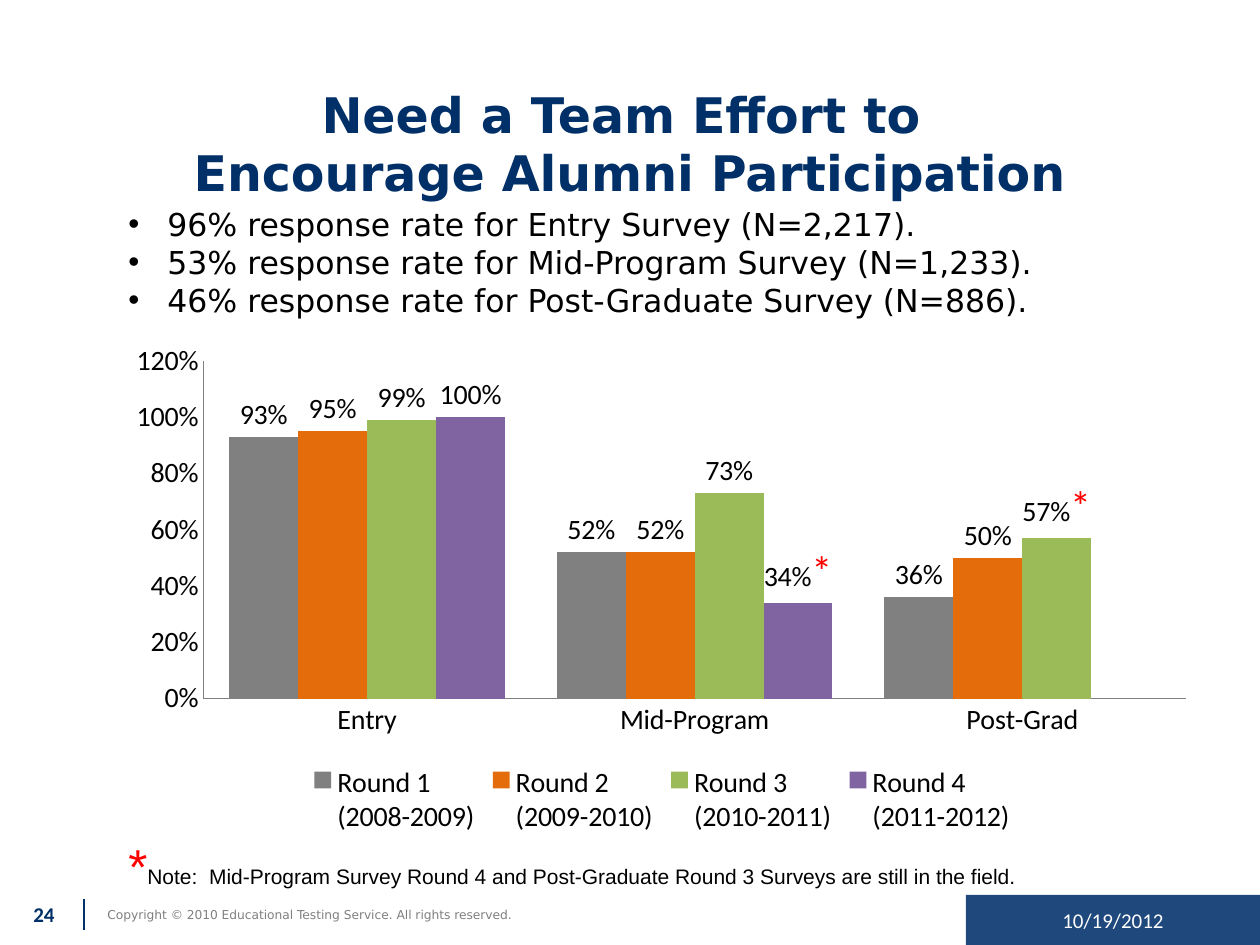
from lxml.etree import SubElement
from pptx import Presentation
from pptx.chart.data import CategoryChartData
from pptx.dml.color import RGBColor
from pptx.enum.chart import XL_CHART_TYPE, XL_LABEL_POSITION, XL_LEGEND_POSITION, XL_TICK_MARK
from pptx.enum.shapes import MSO_CONNECTOR, MSO_SHAPE
from pptx.enum.text import MSO_ANCHOR, PP_ALIGN
from pptx.oxml import parse_xml
from pptx.oxml.ns import nsdecls, qn
from pptx.util import Pt

PX = 914400 / 126
NAVY = RGBColor(0x00, 0x30, 0x67)
BLUE = RGBColor(0x1F, 0x49, 0x7D)
GRAY = RGBColor(0x80, 0x80, 0x80)
ORANGE = RGBColor(0xE4, 0x6C, 0x0A)
GREEN = RGBColor(0x9B, 0xBB, 0x59)
PURPLE = RGBColor(0x80, 0x64, 0xA2)
RED = RGBColor(0xFF, 0x00, 0x00)
BLACK = RGBColor(0x00, 0x00, 0x00)
WHITE = RGBColor(0xFF, 0xFF, 0xFF)


def px(*lengths):
    return [round(length * PX) for length in lengths]


def add_run(para, text, size, font, color, bold=False):
    span = para.add_run()
    span.text = text
    span.font.size = Pt(size)
    span.font.name = font
    span.font.color.rgb = color
    span.font.bold = bold


deck = Presentation()
deck.slide_width, deck.slide_height = px(1260, 945)
page = deck.slides.add_slide(deck.slide_layouts[5])

title = page.shapes.title
title.left, title.top, title.width, title.height = px(52, 63, 1155, 160)
title.text_frame.vertical_anchor = MSO_ANCHOR.MIDDLE
para = title.text_frame.paragraphs[0]
para.alignment = PP_ALIGN.CENTER
add_run(para, "Need a Team Effort to ", 28, "DejaVu Sans", NAVY, True)
para.add_line_break()
add_run(para, "Encourage Alumni Participation", 28, "DejaVu Sans", NAVY, True)

rates = page.shapes.add_textbox(*px(116, 199, 1050, 127))
rates.text_frame.word_wrap = True
for index, text in enumerate([
    "96% response rate for Entry Survey (N=2,217).",
    "53% response rate for Mid-Program Survey (N=1,233).",
    "46% response rate for Post-Graduate Survey (N=886).",
]):
    para = rates.text_frame.paragraphs[0] if index == 0 else rates.text_frame.add_paragraph()
    properties = para._p.get_or_add_pPr()
    indent = px(39)[0]
    properties.set("marL", str(indent))
    properties.set("indent", str(-indent))
    SubElement(properties, qn("a:buFont")).set("typeface", "Arial")
    SubElement(properties, qn("a:buChar")).set("char", "•")
    add_run(para, text, 18, "DejaVu Sans", BLACK)

data = CategoryChartData(number_format="0%")
data.categories = ["Entry", "Mid-Program", "Post-Grad"]
rounds = [
    ("Round 1 \n(2008-2009)", (0.93, 0.52, 0.36), GRAY),
    ("Round 2 \n(2009-2010)", (0.95, 0.52, 0.5), ORANGE),
    ("Round 3 \n(2010-2011)", (0.99, 0.73, 0.57), GREEN),
    ("Round 4 \n(2011-2012)", (1, 0.34, None), PURPLE),
]
for name, values, color in rounds:
    data.add_series(name, values)
chart = page.shapes.add_chart(XL_CHART_TYPE.COLUMN_CLUSTERED, *px(116, 336, 1092, 504), data).chart
chart.has_title = False
chart.font.name = "Calibri"
chart.font.size = Pt(16)
chart.font.color.rgb = BLACK
chart.has_legend = True
chart.legend.position = XL_LEGEND_POSITION.BOTTOM
chart.legend.include_in_layout = False

for axis in (chart.category_axis, chart.value_axis):
    axis.major_tick_mark = XL_TICK_MARK.NONE
    axis.minor_tick_mark = XL_TICK_MARK.NONE
    axis.has_major_gridlines = False
    axis.format.line.color.rgb = GRAY
chart.value_axis.minimum_scale = 0
chart.value_axis.maximum_scale = 1.2
chart.value_axis.major_unit = 0.2
chart.value_axis.tick_labels.number_format = "0%"
chart.value_axis.tick_labels.number_format_is_linked = False

plot = chart.plots[0]
plot.gap_width = 75
plot.overlap = 0
plot.vary_by_categories = False
for series, (name, values, color) in zip(plot.series, rounds):
    series.format.fill.solid()
    series.format.fill.fore_color.rgb = color
    labels = series.data_labels
    labels.show_value = True
    labels.number_format = "0%"
    labels.number_format_is_linked = False
    labels.position = XL_LABEL_POSITION.OUTSIDE_END
for series_index, point_index, text in [(2, 2, "57%"), (3, 1, "34%")]:
    label = plot.series[series_index].points[point_index].data_label
    para = label.text_frame.paragraphs[0]
    add_run(para, text, 16, "Calibri", BLACK)
    add_run(para, "*", 24, "Calibri", RED)
    label.position = XL_LABEL_POSITION.OUTSIDE_END

plot_area = chart._chartSpace.chart.plotArea
for layout in plot_area.findall(qn("c:layout")):
    plot_area.remove(layout)
plot_area.insert(0, parse_xml(
    f'<c:layout {nsdecls("c")}><c:manualLayout><c:layoutTarget val="inner"/>'
    '<c:xMode val="edge"/><c:yMode val="edge"/>'
    '<c:x val="0.08"/><c:y val="0.05"/><c:w val="0.9"/><c:h val="0.67"/>'
    '</c:manualLayout></c:layout>'))

note = page.shapes.add_textbox(*px(116, 829, 921, 72))
note.text_frame.word_wrap = False
para = note.text_frame.paragraphs[0]
add_run(para, "*", 28, "Arial", RED)
add_run(para, "Note:  Mid-Program Survey Round 4 and Post-Graduate Round 3 Surveys are still in the field.",
        12, "Arial", BLACK)

for place, text, size, font, color, bold in [
    ((95, 901, 788, 28), "Copyright © 2010 Educational Testing Service. All rights reserved.",
     7, "DejaVu Sans", GRAY, False),
    ((21, 895, 63, 40), "24", 12, "Calibri", NAVY, True),
]:
    box = page.shapes.add_textbox(*px(*place))
    box.text_frame.word_wrap = True
    add_run(box.text_frame.paragraphs[0], text, size, font, color, bold)

divider = page.shapes.add_connector(MSO_CONNECTOR.STRAIGHT, *px(84, 899, 84, 930))
divider.line.color.rgb = NAVY
divider.line.width = Pt(0.75)
SubElement(divider._element.spPr, qn("a:effectLst"))

date = page.shapes.add_shape(MSO_SHAPE.RECTANGLE, *px(966, 895, 294, 50))
date.shadow.inherit = False
date.fill.solid()
date.fill.fore_color.rgb = BLUE
date.line.fill.background()
date.text_frame.vertical_anchor = MSO_ANCHOR.MIDDLE
para = date.text_frame.paragraphs[0]
para.alignment = PP_ALIGN.CENTER
add_run(para, "10/19/2012", 12, "Calibri", WHITE)

deck.save("out.pptx")
